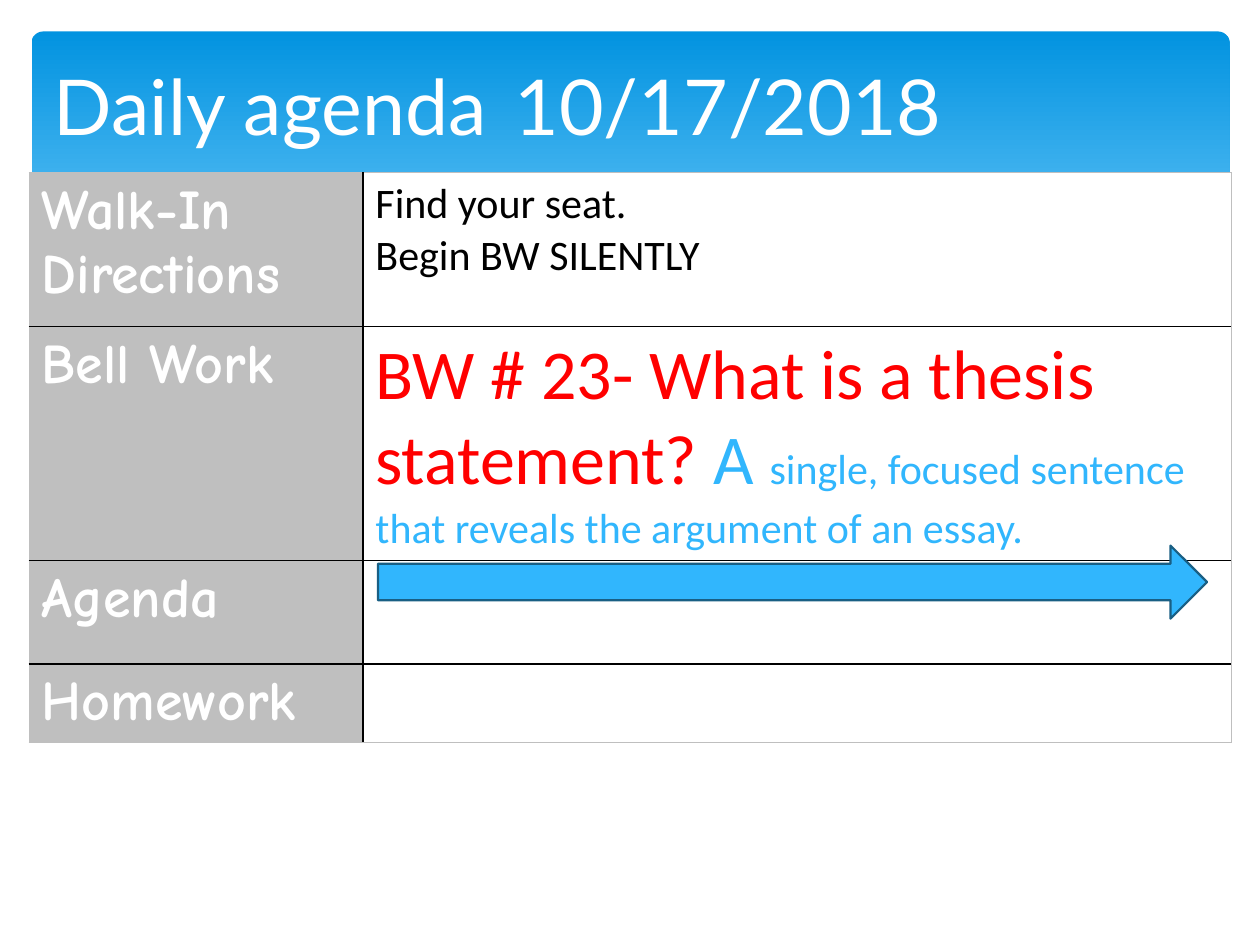
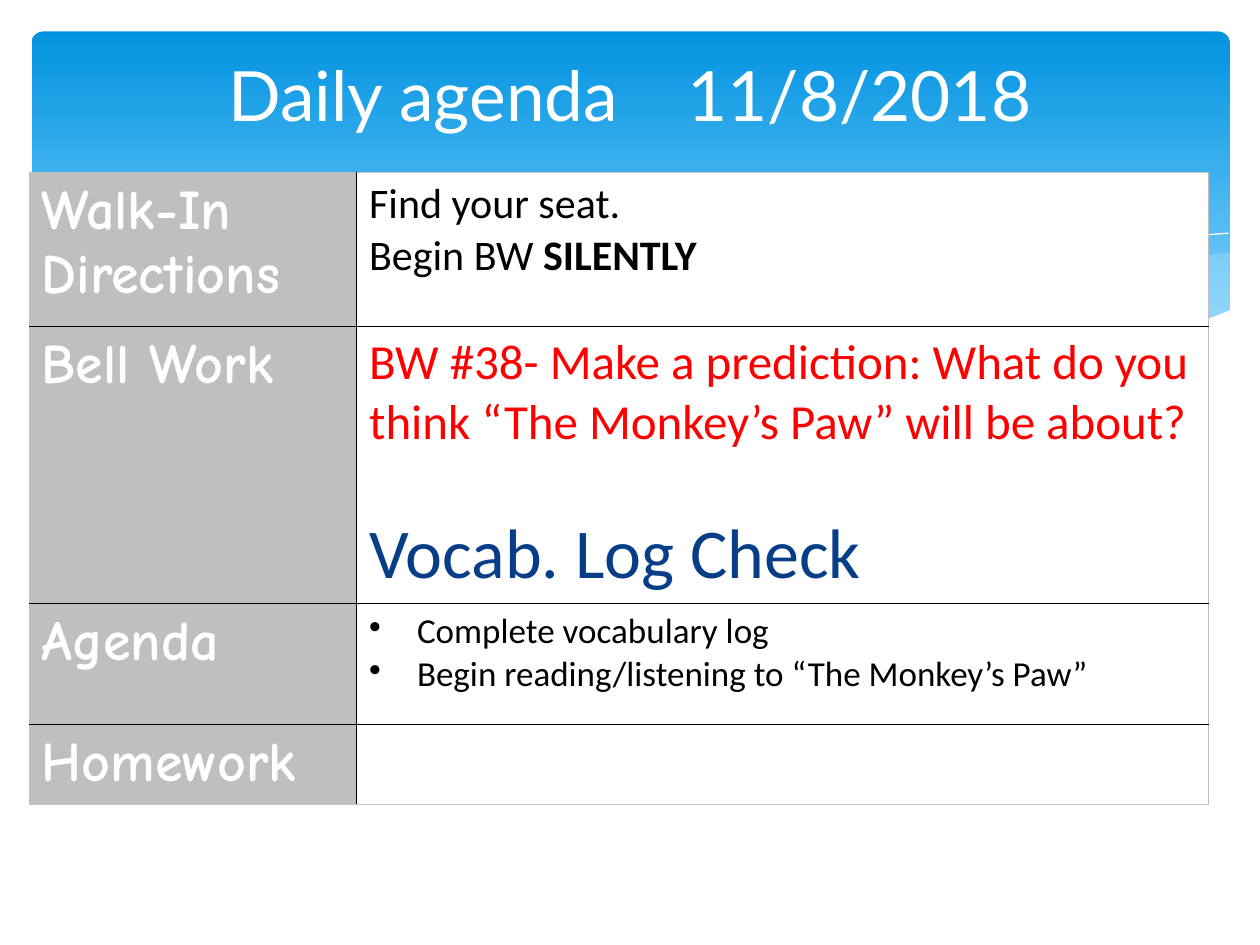
from dataclasses import dataclass
from lxml.etree import SubElement as Sub
from pptx import Presentation
from pptx.dml.color import RGBColor as Rgb
from pptx.enum.shapes import MSO_SHAPE as Shape
from pptx.enum.text import MSO_ANCHOR as Anchor, PP_ALIGN as Align
from pptx.oxml.ns import qn
from pptx.util import Inches, Pt


@dataclass(frozen=True)
class Theme:
    """Colours, fonts and type sizes of the deck."""
    white: str = "FFFFFF"
    black: str = "000000"
    grey: str = "BFBFBF"
    red: str = "FF0000"
    sky: str = "31B6FD"
    navy: str = "073E87"
    edge: str = "195F84"
    top: str = "0293E0"
    low: str = "83D3FE"
    mist: str = "C6E7FC"
    head: str = "Lato"
    label: str = "Comic Neue"
    body: str = "Calibri"
    title: float = 44
    small: float = 39.6
    tag: float = 32
    big: float = 40
    mid: float = 28
    text: float = 24
    item: float = 20


T = Theme()
LABELS = ("Walk-In Directions", "Bell Work", "Agenda", "Homework")
CREST = [(975, 200), (948, 204), (921, 210), (891, 216), (861, 223),
         (805, 237), (753, 248), (706, 257), (661, 265), (691, 269),
         (719, 271), (745, 275), (769, 277), (803, 278), (835, 277),
         (863, 275), (889, 272), (913, 267), (935, 262), (949, 257),
         (963, 252), (976, 247), (976, 200)]
SWELL = [(893, 273), (866, 269), (807, 260), (741, 247), (668, 231),
         (629, 222), (598, 214), (569, 208), (541, 203), (514, 198),
         (489, 194), (442, 189), (399, 186), (361, 185), (328, 187),
         (286, 191), (323, 196), (362, 203), (404, 211), (449, 222),
         (530, 240), (584, 252), (634, 261), (680, 268), (722, 274),
         (761, 277), (807, 278), (848, 277), (876, 275)]
RIPPLE = [(309, 195), (328, 192), (353, 189), (387, 187), (433, 187),
          (469, 189), (510, 192), (556, 197), (608, 204), (665, 213),
          (727, 226), (795, 241), (869, 261), (907, 272)]
CURL = [(613, 257), (653, 246), (695, 235), (748, 223), (806, 210),
        (866, 199), (895, 194), (924, 190), (951, 187), (975, 185)]
SHORE = [(977, 246), (959, 253), (940, 259), (920, 265), (899, 269),
         (875, 273), (850, 275), (823, 277), (793, 276), (761, 275),
         (726, 272), (688, 268), (648, 262), (603, 254), (555, 245),
         (503, 233), (447, 220), (391, 207), (340, 197), (292, 190),
         (250, 186), (211, 184), (177, 184), (146, 185), (119, 187),
         (95, 191), (76, 195), (59, 199), (46, 203), (36, 207),
         (23, 213), (23, 329), (977, 329)]
WAVES = ((CREST, T.mist, 29), (SWELL, T.mist, 40), (RIPPLE, None, 0),
         (CURL, None, 0), (SHORE, T.white, 100))


def rgb(code):
    """Turn a hex code into a colour."""
    return Rgb.from_string(code)


def put(obj, **vals):
    """Set each value on the object."""
    for key, val in vals.items():
        setattr(obj, key, val)


def paint(fill, code):
    """Make a fill solid."""
    fill.solid()
    fill.fore_color.rgb = rgb(code)


def write(par, text, face, size, code, bold=False):
    """Add one styled run to a paragraph."""
    run = par.add_run()
    run.text = text
    put(run.font, name=face, size=Pt(size), bold=bold)
    run.font.color.rgb = rgb(code)


def wave(shapes, left, top, pts, code, alpha):
    """Draw a filled wave, or a white hairline when it has no colour."""
    pen = shapes.build_freeform(*pts[0], scale=9144)
    pen.add_line_segments(pts[1:], close=bool(code))
    form = pen.convert_to_shape(Inches(left), Inches(top))
    form.shadow.inherit = False
    if not code:
        form.fill.background()
        paint(form.line.fill, T.white)
        form.line.width = Pt(0)
        return
    paint(form.fill, code)
    form.line.fill.background()
    if alpha < 100:
        tint = form.fill._xPr.find(".//" + qn("a:srgbClr"))
        Sub(tint, qn("a:alpha"), val=str(alpha * 1000))


def backdrop(slide, left, top):
    """Draw the blue band and its waves from a corner."""
    band = slide.shapes.add_shape(
        Shape.ROUNDED_RECTANGLE, Inches(left + 0.25), Inches(top + 0.25),
        Inches(9.51), Inches(2.7))
    band.adjustments[0] = 0.034
    band.shadow.inherit = False
    band.line.fill.background()
    band.fill.gradient()
    band.fill.gradient_angle = 270
    stops = ((0, T.top), (0.9, T.low))
    for stop, (place, code) in zip(band.fill.gradient_stops, stops):
        stop.position = place
        stop.color.rgb = rgb(code)
    for pts, code, alpha in WAVES:
        wave(slide.shapes, left, top, pts, code, alpha)


def heading(slide, box, text, size, align):
    """Write the slide title in its box."""
    frame = slide.shapes.add_textbox(*map(Inches, box)).text_frame
    put(frame, word_wrap=True, vertical_anchor=Anchor.MIDDLE)
    par = frame.paragraphs[0]
    par.alignment = align
    write(par, text, T.head, size, T.white)


def border(cell, inner):
    """Rule a cell: black on inner sides, grey on outer ones."""
    props = cell._tc.get_or_add_tcPr()
    for side in "LRTB":
        code, width = (T.black, 1) if side in inner else (T.grey, 0.5)
        line = Sub(props, qn("a:ln" + side), w=str(Pt(width)))
        Sub(Sub(line, qn("a:solidFill")), qn("a:srgbClr"), val=code)


def bullet(par):
    """Give a paragraph a hanging bullet."""
    props = par._p.get_or_add_pPr()
    props.set("marL", str(Inches(0.38)))
    props.set("indent", str(-Inches(0.38)))
    Sub(props, qn("a:buChar"), char="•")


def fill_cell(cell, pars):
    """Write paragraphs, each a dict of runs, bullet flag and gap."""
    for num, item in enumerate(pars):
        frame = cell.text_frame
        par = frame.add_paragraph() if num else frame.paragraphs[0]
        if item.get("gap"):
            par.space_before = Pt(item["gap"])
        if item.get("dot"):
            bullet(par)
        for text, size, code, *bold in item["runs"]:
            write(par, text, T.body, size, code, *bold)


def agenda(slide, box, split, rows, notes):
    """Draw the agenda table with its label column."""
    left, top, width = box
    grid = slide.shapes.add_table(
        len(rows), 2, Inches(left), Inches(top), Inches(width),
        Inches(sum(rows))).table
    put(grid, first_row=False, horz_banding=False)
    for col, wide in zip(grid.columns, (split, width - split)):
        col.width = Inches(wide)
    last = len(rows) - 1
    for num, (high, label, pars) in enumerate(zip(rows, LABELS, notes)):
        grid.rows[num].height = Inches(high)
        ends = ("T" if num else "") + ("B" if num < last else "")
        for col, (side, code) in enumerate((("R", T.grey), ("L", T.white))):
            cell = grid.cell(num, col)
            border(cell, ends + side)
            paint(cell.fill, code)
        tag = grid.cell(num, 0).text_frame.paragraphs[0]
        write(tag, label, T.label, T.tag, T.white, True)
        fill_cell(grid.cell(num, 1), pars)


def arrow(slide, box):
    """Draw the blue arrow in its box."""
    form = slide.shapes.add_shape(Shape.RIGHT_ARROW, *map(Inches, box))
    form.shadow.inherit = False
    paint(form.fill, T.sky)
    paint(form.line.fill, T.edge)
    form.line.width = Pt(1.25)


def october(slide):
    """Build the agenda of 17 October."""
    notes = (
        [{"runs": [(text, T.text, T.black)]}
         for text in ("Find your seat.", "Begin BW SILENTLY")],
        [{"runs": [
            ("BW # 23- What is a thesis statement? ", T.big, T.red),
            ("A ", T.big, T.sky),
            ("single, focused sentence that reveals the argument of an "
             "essay.", T.text, T.sky)]}],
        [], [])
    agenda(slide, (0.23, 1.37, 9.54), 2.65, (1.22, 1.86, 0.82, 0.62), notes)
    heading(slide, (0.33, 0.33, 9.33, 1), "Daily agenda\t 10/17/2018",
            T.title, Align.LEFT)
    arrow(slide, (3, 4.33, 6.58, 0.58))


def november(slide):
    """Build the agenda of 8 November."""
    heading(slide, (0.5, 0.37, 9, 0.75), "Daily agenda\t 11/8/2018",
            T.small, Align.CENTER)
    notes = (
        [{"runs": [("Find your seat.", T.text, T.black)]},
         {"runs": [("Begin BW ", T.text, T.black),
                   ("SILENTLY", T.text, T.black, True)]}],
        [{"runs": [("BW #38- Make a prediction: What do you think “The "
                    "Monkey’s Paw” will be about?", T.mid, T.red)]},
         {"runs": [("Vocab. Log Check", T.big, T.navy)], "gap": 34}],
        [{"runs": [(text, T.item, T.black)], "dot": True}
         for text in ("Complete vocabulary log",
                      "Begin reading/listening to “The Monkey’s Paw”")],
        [])
    agenda(slide, (0.23, 1.37, 9.36), 2.6, (1.22, 2.2, 0.96, 0.61), notes)


def main():
    """Build and save the deck."""
    deck = Presentation()
    put(deck, slide_width=Inches(10), slide_height=Inches(7.5))
    for build in (october, november):
        slide = deck.slides.add_slide(deck.slide_layouts[6])
        backdrop(slide, 0, 0)
        build(slide)
    deck.save("out.pptx")


if __name__ == "__main__":
    main()
